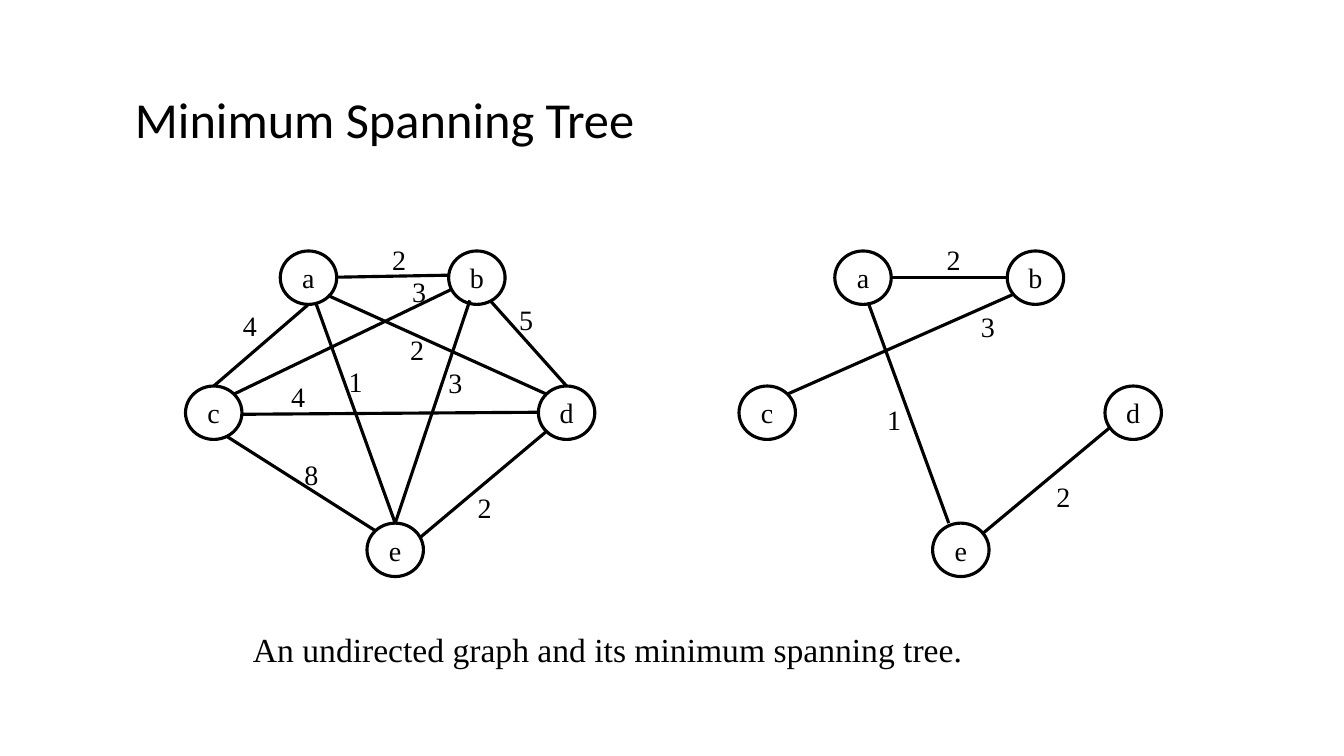
from pptx import Presentation
from pptx.dml.color import RGBColor as Rgb
from pptx.enum.shapes import MSO_CONNECTOR as Conn, MSO_SHAPE as Shape
from pptx.enum.text import MSO_ANCHOR as Anchor, MSO_AUTO_SIZE as Auto, PP_ALIGN as Align
from pptx.oxml.ns import qn
from pptx.util import Pt
from lxml.etree import SubElement as Sub

PX = 9144  # 100 px to the inch
HUE = {"ink": "000000", "paper": "FFFFFF"}
INK = Rgb.from_string(HUE["ink"])
PAPER = Rgb.from_string(HUE["paper"])
SERIF = "Times New Roman"
WIDE, HIGH = 56, 53  # node size
ROWS = {"a": 249, "b": 249, "c": 383, "d": 383, "e": 519}

deck = Presentation()
deck.slide_width, deck.slide_height = 1333 * PX, 750 * PX
slide = deck.slides.add_slide(deck.slide_layouts[6])
shapes = slide.shapes


def write(frame, text, size, face=SERIF, **form):
    for key, val in form.items():
        setattr(frame, key, val)
    run = frame.paragraphs[0].add_run()
    run.text = text
    for key, val in {"size": Pt(size), "name": face}.items():
        setattr(run.font, key, val)
    run.font.color.rgb = INK


def label(box, text, size, face=SERIF, wrap=True):
    item = shapes.add_textbox(*(n * PX for n in box))
    write(item.text_frame, text, size, face,
          word_wrap=wrap, auto_size=Auto.SHAPE_TO_FIT_TEXT)


# Each graph: node lefts, edges (x1, y1, x2, y2), weights (text, left, top)
full = {
    "nodes": {"a": 278, "b": 445, "c": 184, "d": 534, "e": 364},
    "edges": [
        (334, 275, 445, 273), (306, 302, 212, 383), (232, 391, 448, 287),
        (313, 300, 392, 519), (417, 533, 542, 428), (225, 433, 373, 527),
        (241, 411, 534, 409), (325, 293, 542, 391), (486, 298, 562, 383),
        (466, 298, 392, 519),
    ],
    "weights": [
        ("2", 379, 236), ("4", 231, 301), ("3", 399, 267), ("3", 435, 358),
        ("5", 505, 295), ("2", 397, 325), ("1", 336, 357), ("4", 279, 372),
        ("8", 292, 449), ("2", 464, 482),
    ],
}
tree = {
    "nodes": {"a": 828, "b": 999, "c": 733, "d": 1096, "e": 925},
    "edges": [
        (885, 275, 999, 275), (781, 391, 1005, 292),
        (861, 300, 941, 519), (975, 529, 1101, 424),
    ],
    "weights": [("2", 1038, 471), ("1", 870, 394), ("3", 963, 302), ("2", 929, 236)],
}

# Title
label((124, 82, 643, 71), "Minimum Spanning Tree", 36, "Calibri")

# Graphs
for graph in (full, tree):
    tops = {}
    for name, left in graph["nodes"].items():
        top = ROWS[name]
        node = shapes.add_shape(Shape.OVAL, left * PX, top * PX, WIDE * PX, HIGH * PX)
        node.shadow.inherit = False
        node.fill.solid()
        node.fill.fore_color.rgb = PAPER
        node.line.color.rgb = INK
        node.line.width = Pt(2.25)
        write(node.text_frame, name, 20, vertical_anchor=Anchor.MIDDLE,
              margin_left=0, margin_right=0, margin_top=0, margin_bottom=0)
        node.text_frame.paragraphs[0].alignment = Align.CENTER
        tops[left + WIDE // 2, top] = node

    for edge in graph["edges"]:
        line = shapes.add_connector(Conn.STRAIGHT, *(n * PX for n in edge))
        line.line.color.rgb = INK
        line.line.width = Pt(2.25)
        Sub(line._element.spPr, qn("a:effectLst"))
        if edge[2:] in tops:
            line.end_connect(tops[edge[2:]], 0)

    for text, left, top in graph["weights"]:
        label((left, top, 34, 44), text, 20, wrap=False)

# Caption
label((241, 619, 749, 50), "An undirected graph and its minimum spanning tree.", 24)

deck.save("out.pptx")
